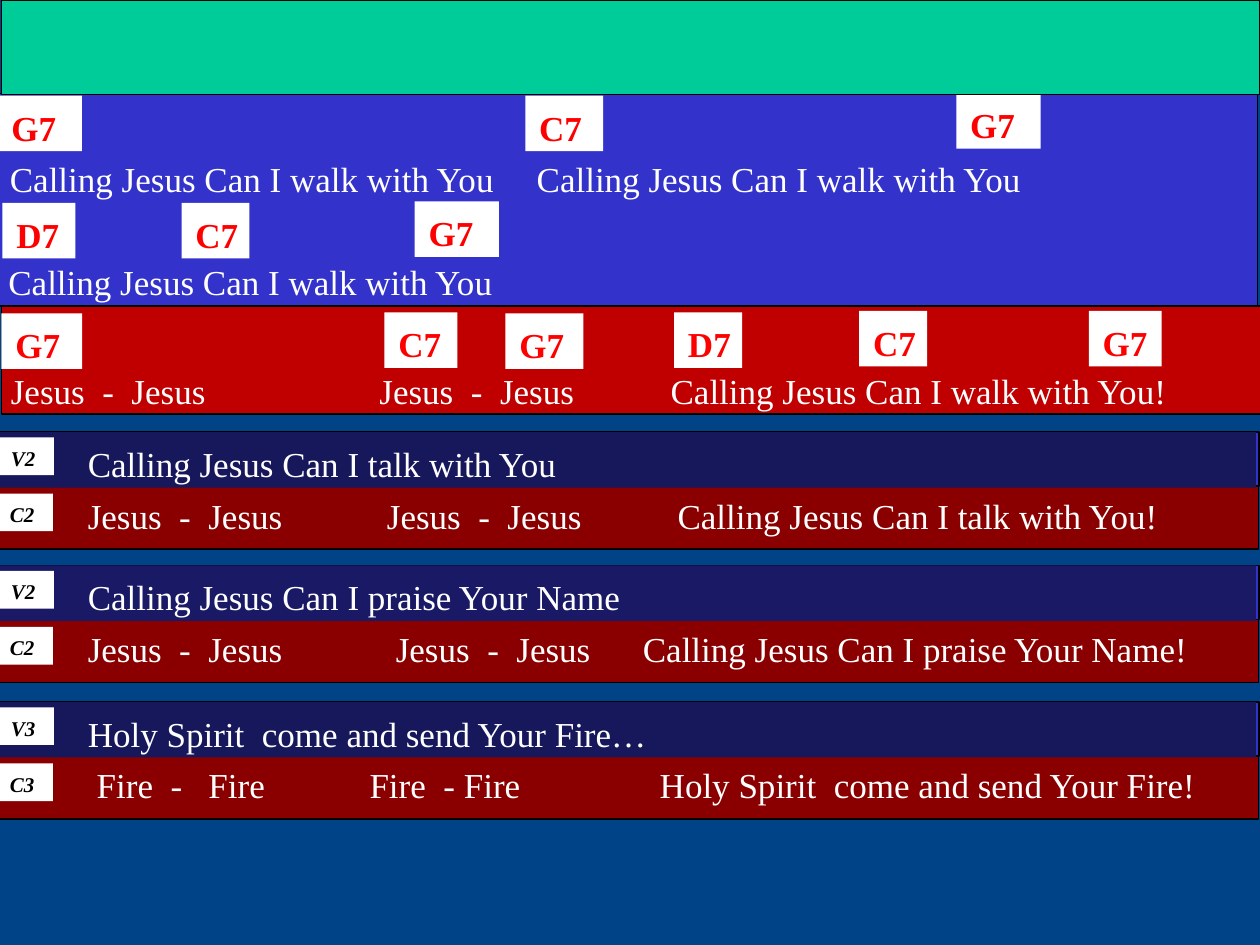
from lxml import etree
from pptx import Presentation
from pptx import util as u
from pptx.dml.color import RGBColor
from pptx.enum import shapes, text
from pptx.oxml.ns import qn

FONT = "Times New Roman"
LINE_H = 1.12

# chord, left, top, width in cm
CHORDS = [
    ("G7", -0.05, 1.93, 1.7), ("C7", 10.59, 1.93, 1.57), ("G7", 19.28, 1.88, 1.7),
    ("D7", 0.05, 4.09, 1.47), ("C7", 3.66, 4.09, 1.37), ("G7", 8.36, 4.06, 1.7),
    ("G7", 0.03, 6.32, 1.63), ("C7", 7.75, 6.3, 1.47), ("G7", 10.19, 6.32, 1.57),
    ("D7", 13.59, 6.3, 1.37), ("C7", 17.32, 6.27, 1.37), ("G7", 21.95, 6.27, 1.47),
]

# top, verse colour, verse label, verse, chorus label, chorus, chorus inset, chorus tabs
VERSES = [
    (8.71, "17175C", "V2", "Calling Jesus Can I talk with You",
     "C2", "Jesus  -  Jesus\tJesus  -  Jesus\tCalling Jesus Can I talk with You!",
     1.85, (6.03, 11.89)),
    (11.4, "191966", "V2", "Calling Jesus Can I praise Your Name",
     "C2", "Jesus  -  Jesus\tJesus  -  Jesus\tCalling Jesus Can I praise Your Name!",
     1.85, (6.21, 11.19)),
    (14.15, "17175C", "V3", "Holy Spirit  come and send Your Fire…",
     "C3", "Fire  -   Fire\tFire  - Fire\tHoly Spirit  come and send Your Fire!",
     2.03, (5.5, 11.35)),
]


def rgb(value):
    return RGBColor.from_string(value)


def write(sp, content, size=20, color="FFFFFF", bold=False, italic=False,
          inset=0.25, top=0.21, tabs=()):
    """Put one left-aligned line in a shape; tabs are in cm from the inset."""
    tf = sp.text_frame
    tf.word_wrap = True
    tf.vertical_anchor = text.MSO_ANCHOR.TOP
    tf.margin_left, tf.margin_top = u.Cm(inset), u.Cm(top)
    tf.margin_right = tf.margin_bottom = 0
    p = tf.paragraphs[0]
    p.alignment = text.PP_ALIGN.LEFT
    if tabs:
        tab_list = etree.SubElement(p._p.get_or_add_pPr(), qn("a:tabLst"))
        for pos in tabs:
            etree.SubElement(tab_list, qn("a:tab"), pos=str(u.Cm(pos)), algn="l")
    r = p.add_run()
    r.text = content
    r.font.name, r.font.size = FONT, u.Pt(size)
    r.font.bold, r.font.italic = bold, italic
    r.font.color.rgb = rgb(color)


def add_band(s, x, y, w, h, fill, outlined=False):
    sp = s.shapes.add_shape(shapes.MSO_SHAPE.RECTANGLE,
                            u.Cm(x), u.Cm(y), u.Cm(w), u.Cm(h))
    sp.shadow.inherit = False
    sp.fill.solid()
    sp.fill.fore_color.rgb = rgb(fill)
    if outlined:
        sp.line.color.rgb = rgb("000000")
        sp.line.width = u.Pt(0.75)
    else:
        sp.line.fill.background()
    return sp


def add_lyric(s, content, x, y, **fmt):
    sp = s.shapes.add_textbox(u.Cm(x), u.Cm(y), u.Cm(25.4), u.Cm(LINE_H))
    write(sp, content, **fmt)


def add_chord(s, name, x, y, w):
    sp = add_band(s, x, y, w, LINE_H, "FFFFFF")
    write(sp, name, color="FF0000", bold=True, inset=0.28)


def add_label(s, name, x, y):
    sp = add_band(s, x, y, 1.12, 0.76, "FFFFFF")
    write(sp, name, size=12, color="000000", bold=True, italic=True, top=0.16)


def add_verse(s, y, fill, verse_label, verse, chorus_label, chorus, inset, tabs):
    chorus_y = y + 1.04
    add_band(s, -0.08, chorus_y, 25.45, 1.32, "8A0000", outlined=True)
    add_band(s, -0.05, y, 25.43, 1.09, "3333CC", outlined=True)
    write(add_band(s, -0.08, y, 25.4, LINE_H, fill), verse, inset=1.85)
    add_lyric(s, chorus, -0.08, chorus_y, inset=inset, tabs=tabs)
    add_label(s, verse_label, -0.03, y + 0.11)
    add_label(s, chorus_label, -0.05, y + 1.24)


def main():
    prs = Presentation()
    prs.slide_width, prs.slide_height = u.Cm(25.4), u.Cm(19.05)
    s = prs.slides.add_slide(prs.slide_layouts[6])
    s.background.fill.solid()
    s.background.fill.fore_color.rgb = rgb("004487")

    add_band(s, 0.03, 6.17, 25.4, 2.18, "C00000", outlined=True)
    add_band(s, -0.08, 1.88, 25.43, 4.29, "3333CC", outlined=True)
    line = "Calling Jesus Can I walk with You"
    add_lyric(s, f"{line}\t{line}", -0.05, 2.97, tabs=(10.62,))
    add_lyric(s, line, -0.08, 5.05)
    add_lyric(s, f"Jesus  -  Jesus\tJesus  -  Jesus\t{line}!", -0.03, 7.24,
              tabs=(7.43, 13.3))
    for chord in CHORDS:
        add_chord(s, *chord)
    for verse in VERSES:
        add_verse(s, *verse)
    add_band(s, 0.03, 0, 25.37, 1.9, "00CC99", outlined=True)
    prs.save("out.pptx")


if __name__ == "__main__":
    main()
